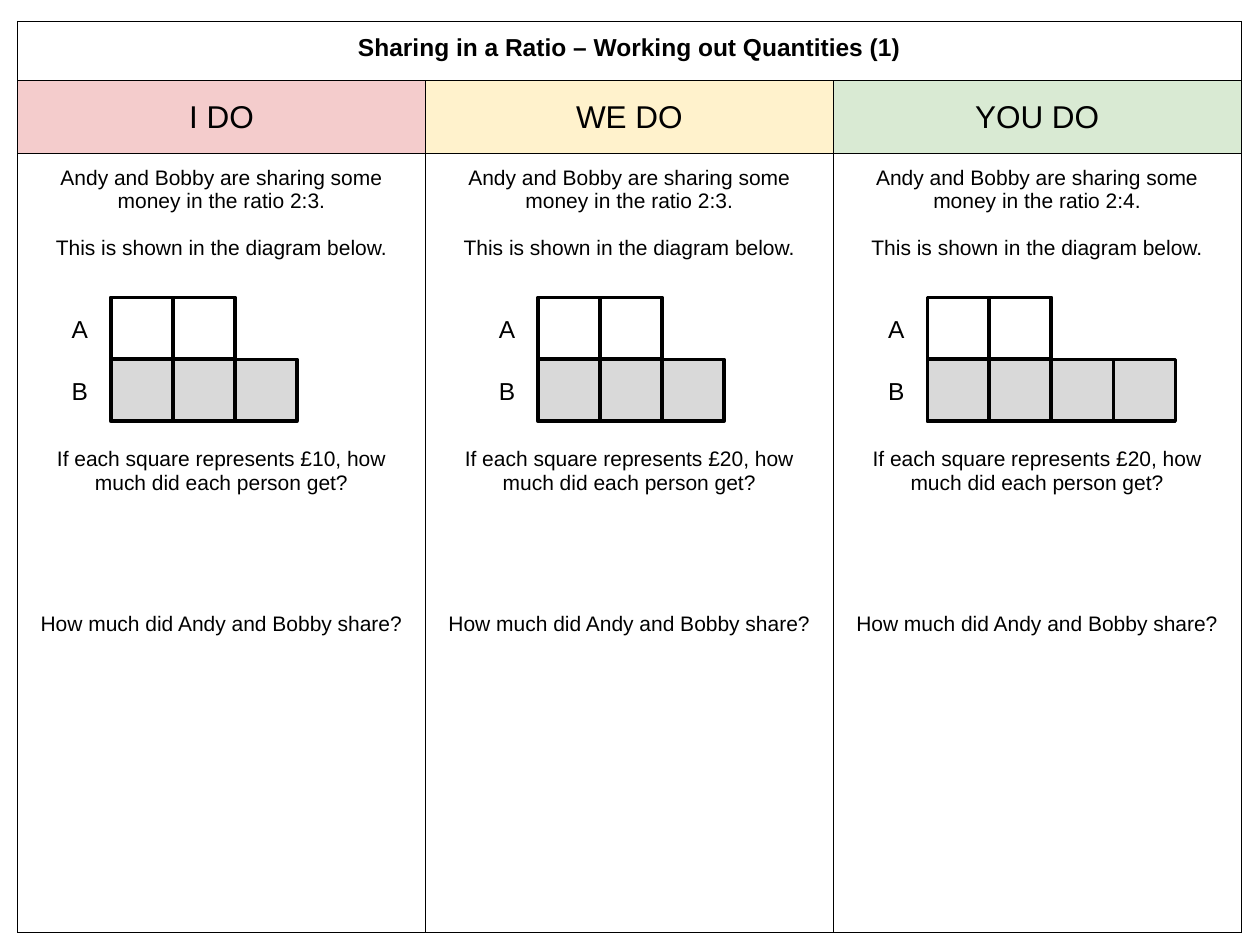
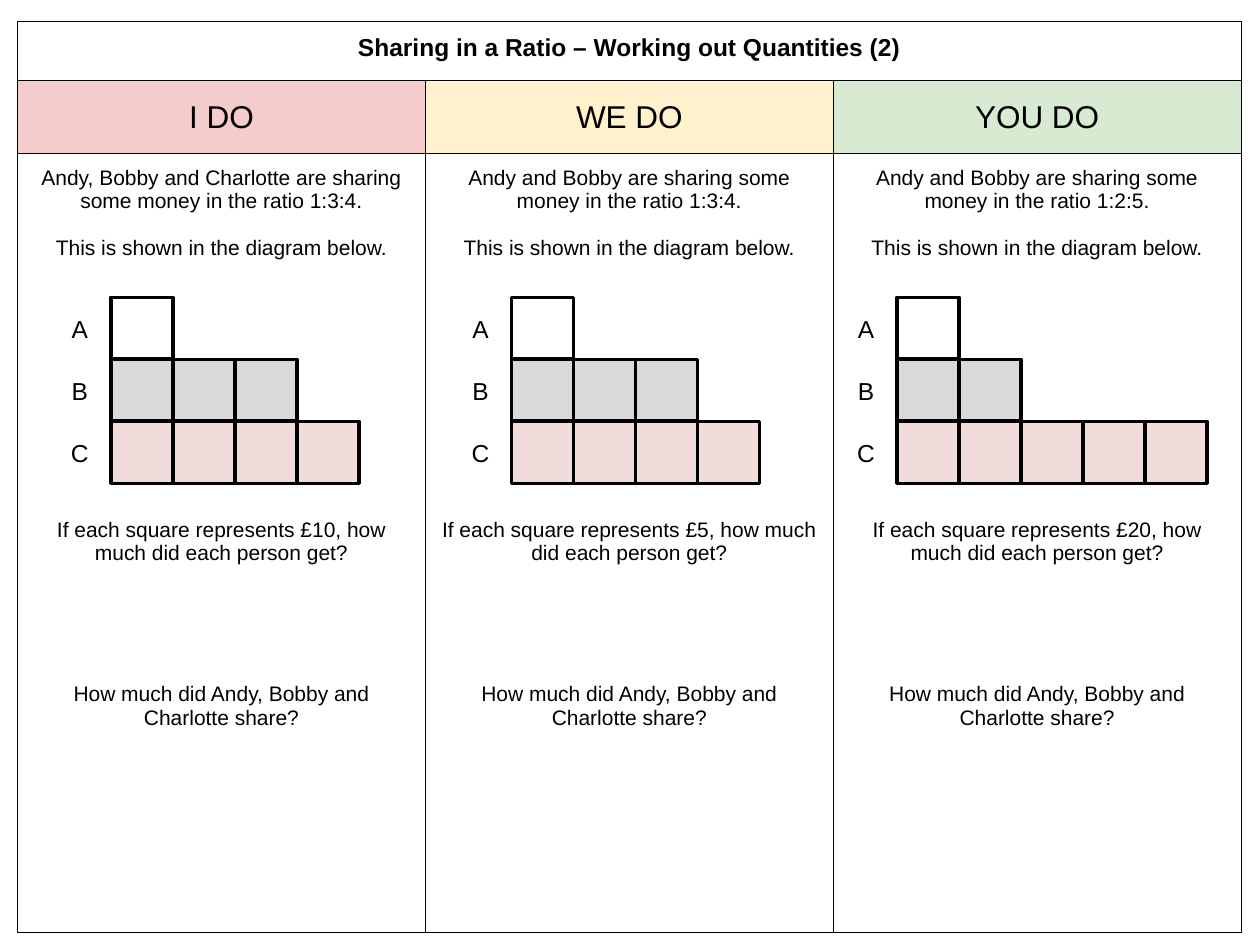
from pptx import Presentation
from pptx.dml.color import RGBColor
from pptx.enum.shapes import MSO_SHAPE
from pptx.enum.text import MSO_ANCHOR, PP_ALIGN
from pptx.oxml import parse_xml
from pptx.oxml.ns import nsdecls
from pptx.util import Cm, Inches, Pt

COLORS = {"ink": "000000", "I DO": "F4CCCC", "WE DO": "FFF2CC", "YOU DO": "D9EAD3",
          "A": "FFFFFF", "B": "D9D9D9", "C": "F2DCDB"}
STAGES = ["I DO", "WE DO", "YOU DO"]
TITLE = "Sharing in a Ratio – Working out Quantities ({})"
PAIR, TRIO = "Andy and Bobby", "Andy, Bobby and Charlotte"

LESSONS = [
    {"sharers": PAIR, "gap_lines": 8, "tasks": [
        {"people": PAIR, "ratio": (2, 3), "value": 10, "left": 0.88},
        {"people": PAIR, "ratio": (2, 3), "value": 20, "left": 4.27},
        {"people": PAIR, "ratio": (2, 4), "value": 20, "left": 7.36}]},
    {"sharers": TRIO, "gap_lines": 11, "tasks": [
        {"people": TRIO, "ratio": (1, 3, 4), "value": 10, "left": 0.88},
        {"people": PAIR, "ratio": (1, 3, 4), "value": 5, "left": 4.06},
        {"people": PAIR, "ratio": (1, 2, 5), "value": 20, "left": 7.12}]},
]

TABLE_LEFT, TABLE_TOP, TABLE_WIDTH = 0.14, 0.17, 9.71
ROW_HEIGHTS = [0.47, 0.58, 6.18]
DIAGRAM_TOP = Inches(2.36)
SQUARE = Cm(1.25)
LINE_POINTS = 13.4
ANSWER_LINES = 5
TITLE_FORMAT = {"size": Pt(14), "bold": True}
STAGE_FORMAT = {"size": Pt(18), "bold": False}
TASK_FORMAT = {"size": Pt(12), "bold": False}
LABEL_FORMAT = {"size": Pt(14), "bold": False}


def color(name):
    return RGBColor.from_string(COLORS[name])


def write(text_frame, lines, font_format):
    """Write centred paragraphs given as (text, blank lines before) pairs."""
    for index, (text, blank_lines) in enumerate(lines):
        paragraph = text_frame.paragraphs[0] if index == 0 else text_frame.add_paragraph()
        paragraph.alignment = PP_ALIGN.CENTER
        paragraph.space_before = Pt(blank_lines * LINE_POINTS)
        run = paragraph.add_run()
        run.text = text
        for name, value in {"name": "Arial", **font_format}.items():
            setattr(run.font, name, value)
        run.font.color.rgb = color("ink")


def style_cell(cell):
    """Give a cell thin black borders, even margins and no fill."""
    properties = cell._tc.get_or_add_tcPr()
    for side in "LRTB":
        properties.append(parse_xml(
            f'<a:ln{side} {nsdecls("a")} w="{Pt(0.75)}"><a:solidFill>'
            f'<a:srgbClr val="{COLORS["ink"]}"/></a:solidFill></a:ln{side}>'))
    for side in ("left", "right", "top", "bottom"):
        setattr(cell, f"margin_{side}", Inches(0.1))
    cell.fill.background()


def task_lines(lesson, task):
    return [
        (f"{task['people']} are sharing some money in the ratio "
         f"{':'.join(map(str, task['ratio']))}.", 0),
        ("This is shown in the diagram below.", 1),
        (f"If each square represents £{task['value']}, how much did each person get?",
         lesson["gap_lines"]),
        (f"How much did {lesson['sharers']} share?", ANSWER_LINES),
    ]


def add_lesson_table(slide, number, lesson):
    table = slide.shapes.add_table(
        len(ROW_HEIGHTS), len(STAGES), Inches(TABLE_LEFT), Inches(TABLE_TOP),
        Inches(TABLE_WIDTH), Inches(sum(ROW_HEIGHTS))).table
    table.first_row = table.horz_banding = False
    for row, height in zip(table.rows, ROW_HEIGHTS):
        row.height = Inches(height)
    for cell in table.iter_cells():
        style_cell(cell)
    table.cell(0, 0).merge(table.cell(0, len(STAGES) - 1))
    write(table.cell(0, 0).text_frame, [(TITLE.format(number), 0)], TITLE_FORMAT)
    for column, (stage, task) in enumerate(zip(STAGES, lesson["tasks"])):
        heading = table.cell(1, column)
        heading.fill.solid()
        heading.fill.fore_color.rgb = color(stage)
        heading.vertical_anchor = MSO_ANCHOR.MIDDLE
        write(heading.text_frame, [(stage, 0)], STAGE_FORMAT)
        write(table.cell(2, column).text_frame, task_lines(lesson, task), TASK_FORMAT)


def add_ratio_diagram(slide, task):
    left = Inches(task["left"])
    for row, (person, share) in enumerate(zip("ABC", task["ratio"])):
        top = DIAGRAM_TOP + row * SQUARE
        label = slide.shapes.add_textbox(left - SQUARE, top, SQUARE, SQUARE)
        label.text_frame.word_wrap = True
        label.text_frame.vertical_anchor = MSO_ANCHOR.MIDDLE
        write(label.text_frame, [(person, 0)], LABEL_FORMAT)
        for column in range(share):
            square = slide.shapes.add_shape(
                MSO_SHAPE.RECTANGLE, left + column * SQUARE, top, SQUARE, SQUARE)
            square.shadow.inherit = False
            square.fill.solid()
            square.fill.fore_color.rgb = color(person)
            square.line.color.rgb = color("ink")
            square.line.width = Pt(2)


def main():
    presentation = Presentation()
    presentation.slide_width, presentation.slide_height = Inches(10), Inches(7.5)
    for number, lesson in enumerate(LESSONS, start=1):
        slide = presentation.slides.add_slide(presentation.slide_layouts[6])
        add_lesson_table(slide, number, lesson)
        for task in lesson["tasks"]:
            add_ratio_diagram(slide, task)
    presentation.save("out.pptx")


if __name__ == "__main__":
    main()
